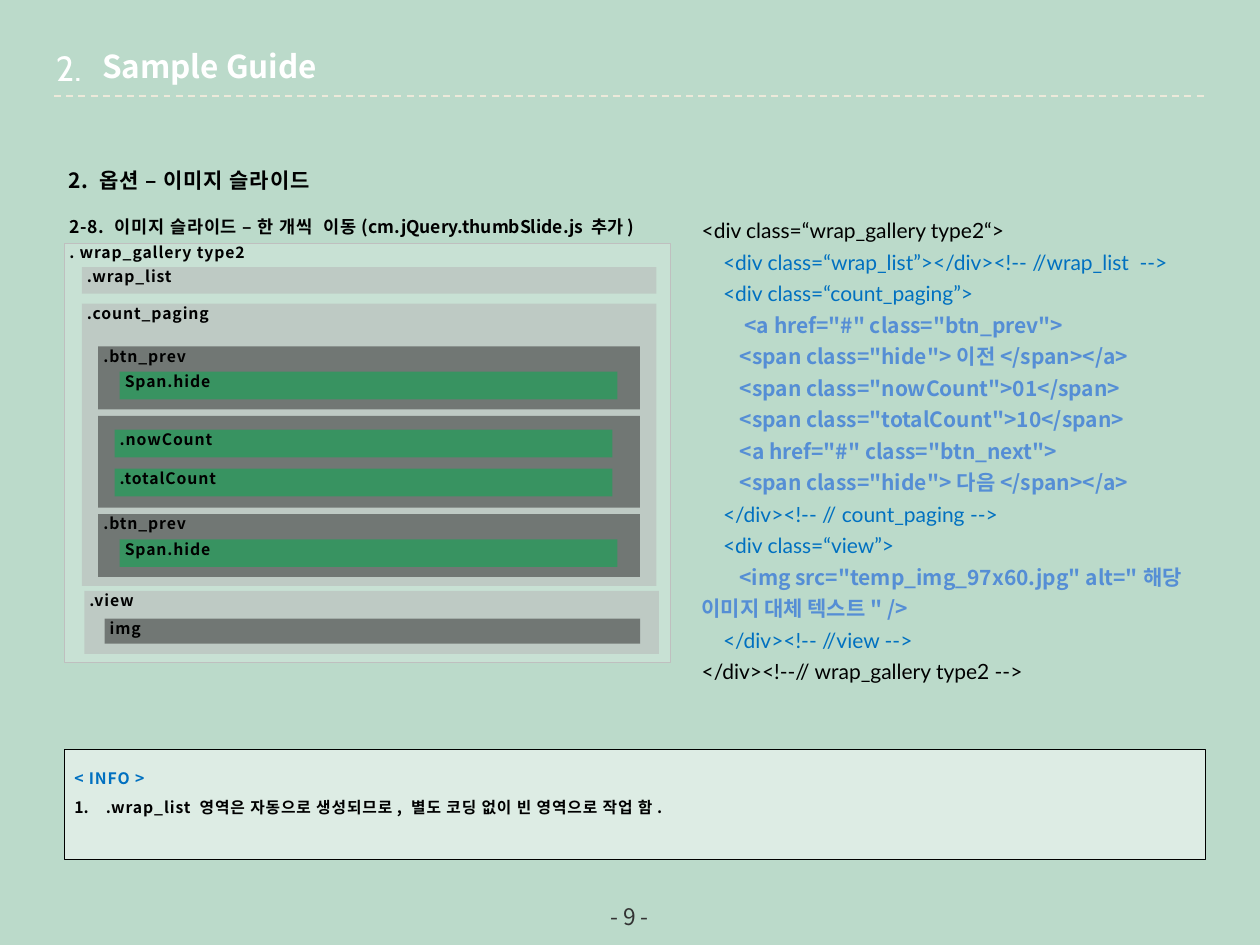
from dataclasses import dataclass

import pptx
import pptx.dml.color
import pptx.enum.dml
import pptx.enum.shapes
import pptx.enum.text
import pptx.oxml
import pptx.oxml.ns
import pptx.util
from pptx.util import Inches

COLORS = {
    "background": "BBDACA", "rule": "ECE9DA", "white": "FFFFFF", "black": "000000",
    "frame": "BFBFBF", "section": "B5B5B5", "block": "262626", "item": "00B050",
    "markup": "0070C0", "inner": "558ED5", "number": "333333",
}
SANS, CODE = "Noto Sans CJK KR", "Lato"


@dataclass(frozen=True)
class Style:
    size: float
    color: str = "black"
    face: str = SANS
    bold: bool = False
    spacing: float = 0


@dataclass(frozen=True)
class Block:
    label: str
    left: float
    top: float
    width: float
    height: float
    color: str = "section"
    alpha: int = 50


@dataclass(frozen=True)
class CodeLine:
    indent: int
    text: str
    style: Style
    indent_style: Style | None = None


LABEL = Style(9, bold=True, spacing=0.5)
OUTER = Style(12, face=CODE)
MARKUP = Style(12, "markup", CODE)
INNER = Style(12, "inner", bold=True)

BLOCKS = [
    Block(".wrap_list", 0.65, 2.12, 4.56, 0.21),
    Block(".count_paging", 0.65, 2.41, 4.56, 2.24),
    Block(".view", 0.67, 4.69, 4.56, 0.5),
    Block(".btn_prev", 0.78, 2.75, 4.3, 0.5, "block"),
    Block("img", 0.83, 4.91, 4.25, 0.2, "block"),
    Block("Span.hide", 0.95, 2.95, 3.95, 0.22, "item"),
    Block("", 0.78, 3.3, 4.3, 0.73, "block"),
    Block(".btn_prev", 0.78, 4.08, 4.3, 0.5, "block"),
    Block("Span.hide", 0.95, 4.28, 3.95, 0.22, "item"),
    Block(".nowCount", 0.91, 3.41, 3.95, 0.22, "item"),
    Block(".totalCount", 0.91, 3.72, 3.95, 0.22, "item"),
]

CODE_LINES = [
    CodeLine(0, "<div class=“wrap_gallery type2“>", OUTER),
    CodeLine(4, "<div class=“wrap_list”></div><!-- //wrap_list  -->", MARKUP),
    CodeLine(4, "<div class=“count_paging”>", MARKUP),
    CodeLine(8, '<a href="#" class="btn_prev">', INNER, MARKUP),
    CodeLine(8, '<span class="hide">이전</span></a>', INNER),
    CodeLine(8, '<span class="nowCount">01</span>', INNER),
    CodeLine(8, '<span class="totalCount">10</span>', INNER),
    CodeLine(8, '<a href="#" class="btn_next">', INNER),
    CodeLine(8, '<span class="hide">다음</span></a>', INNER),
    CodeLine(4, "</div><!-- // count_paging -->", MARKUP),
    CodeLine(4, "<div class=“view”>", MARKUP),
    CodeLine(8, '<img src="temp_img_97x60.jpg" alt="해당 이미지 대체 텍스트" />',
             INNER, Style(12)),
    CodeLine(4, "</div><!-- //view -->", MARKUP),
    CodeLine(0, "</div><!--// wrap_gallery type2 -->", OUTER),
]


def rgb(name: str) -> pptx.dml.color.RGBColor:
    return pptx.dml.color.RGBColor.from_string(COLORS[name])


def add_element(parent, tag: str, **attributes: str):
    element = pptx.oxml.ns.qn(tag)
    child = parent.makeelement(element, attributes)
    parent.append(child)
    return child


def apply_style(font, style: Style) -> None:
    """Format a paragraph or run font, for Latin and Korean letters alike."""
    font.size = pptx.util.Pt(style.size)
    font.bold = style.bold
    font.name = style.face
    font.color.rgb = rgb(style.color)
    properties = font._rPr
    properties.set("spc", str(round(style.spacing * 100)))
    add_element(properties, "a:ea", typeface=style.face)


def prepare_frame(shape, margins=(0.04, 0, 0, 0)):
    frame = shape.text_frame
    frame.word_wrap = True
    frame.vertical_anchor = pptx.enum.text.MSO_ANCHOR.TOP
    (frame.margin_left, frame.margin_top,
     frame.margin_right, frame.margin_bottom) = map(Inches, margins)
    return frame


def write(para, text: str, style: Style, align=pptx.enum.text.PP_ALIGN.LEFT) -> None:
    para.text = text
    para.alignment = align
    apply_style(para.font, style)


def add_box(page, left: float, top: float, width: float, height: float,
            margins=(0.04, 0, 0, 0)):
    box = page.shapes.add_textbox(*map(Inches, (left, top, width, height)))
    return prepare_frame(box, margins)


def add_block(page, block: Block, border: str = "", border_width: float = 0,
              margins=(0.04, 0, 0, 0)):
    """Draw a translucent labelled rectangle and return its text frame."""
    shape = page.shapes.add_shape(
        pptx.enum.shapes.MSO_SHAPE.RECTANGLE,
        *map(Inches, (block.left, block.top, block.width, block.height)))
    shape.shadow.inherit = False
    shape.fill.solid()
    shape.fill.fore_color.rgb = rgb(block.color)
    color = shape.fill._xPr.find(".//" + pptx.oxml.ns.qn("a:srgbClr"))
    add_element(color, "a:alpha", val=str(block.alpha * 1000))
    if border:
        shape.line.color.rgb = rgb(border)
        shape.line.width = pptx.util.Pt(border_width)
    else:
        shape.line.fill.background()
    frame = prepare_frame(shape, margins)
    if block.label:
        write(frame.paragraphs[0], block.label, LABEL)
    return frame


def add_header_rule(page) -> None:
    rule = page.shapes.add_connector(
        pptx.enum.shapes.MSO_CONNECTOR.STRAIGHT, *map(Inches, (0.43, 0.76, 9.57, 0.76)))
    rule.line.color.rgb = rgb("rule")
    rule.line.width = pptx.util.Pt(1)
    rule.line.dash_style = pptx.enum.dml.MSO_LINE.DASH
    add_element(rule._element.spPr, "a:effectLst")


def add_code(page) -> None:
    frame = add_box(page, 5.47, 1.63, 4.25, 3.89, (0.1, 0.05, 0.1, 0.05))
    for index, line in enumerate(CODE_LINES):
        para = frame.add_paragraph() if index else frame.paragraphs[0]
        para.line_spacing = pptx.util.Pt(18)
        indent = " " * line.indent
        if line.indent_style:
            for text, style in ((indent, line.indent_style), (line.text, line.style)):
                span = para.add_run()
                span.text = text
                apply_style(span.font, style)
        else:
            write(para, indent + line.text, line.style)


def add_headings(page) -> None:
    heading = add_box(page, 0.5, 1.23, 2.2, 0.3).paragraphs[0]
    heading.line_spacing = 1.5
    write(heading, "2. 옵션 – 이미지 슬라이드", Style(12, bold=True, spacing=0.5))
    subheading = add_box(page, 0.51, 1.63, 4.63, 0.25).paragraphs[0]
    subheading.line_spacing = 1.5
    for text, spacing in (("2-8. 이미지 슬라이드 – 한 개씩  이동(", 0.5),
                          ("cm.jQuery.thumbSlide.js 추가", 0), (")", 0.5)):
        span = subheading.add_run()
        span.text = text
        apply_style(span.font, Style(10, bold=True, spacing=spacing))


def add_info(page) -> None:
    frame = add_block(page, Block("", 0.51, 5.95, 9.06, 0.87, "white"),
                      "black", 0.75, (0.08, 0.08, 0.08, 0))
    caption, note = frame.paragraphs[0], frame.add_paragraph()
    caption.line_spacing = note.line_spacing = 1.5
    write(caption, "< INFO >", Style(9, "markup", bold=True, spacing=0.5))
    properties = note._p.get_or_add_pPr()
    properties.set("marL", str(Inches(0.25)))
    properties.set("indent", str(-Inches(0.25)))
    add_element(properties, "a:buAutoNum", type="arabicPeriod")
    write(note, ".wrap_list 영역은 자동으로 생성되므로, 별도 코딩 없이 빈 영역으로 작업 함.", LABEL)


def add_title(page) -> None:
    center = pptx.enum.text.PP_ALIGN.CENTER
    margins = (0.1, 0.05, 0.1, 0.05)
    number = add_box(page, 0.27, 0.32, 0.55, 0.44, margins)
    write(number.paragraphs[0], "2.", Style(20, "white", "Cabin"), center)
    title = page.shapes.title
    title.left, title.top, title.width, title.height = map(Inches, (0.71, 0.32, 4.61, 0.4))
    frame = prepare_frame(title, margins)
    frame.auto_size = pptx.enum.text.MSO_AUTO_SIZE.NONE
    write(frame.paragraphs[0], "Sample Guide", Style(18, "white", bold=True))
    footer = add_box(page, 3.83, 7.12, 2.33, 0.31, (0, 0, 0, 0))
    footer.vertical_anchor = pptx.enum.text.MSO_ANCHOR.MIDDLE
    write(footer.paragraphs[0], "- 9 -", Style(13, "number"), center)


def main() -> None:
    deck = pptx.Presentation()
    deck.slide_width, deck.slide_height = Inches(10), Inches(7.5)
    page = deck.slides.add_slide(deck.slide_layouts.get_by_name("Title Only"))
    page.background.fill.solid()
    page.background.fill.fore_color.rgb = rgb("background")
    add_header_rule(page)
    add_title(page)
    add_headings(page)
    add_block(page, Block(". wrap_gallery type2", 0.51, 1.93, 4.81, 3.33, "white", 20),
              "frame", 0.25)
    for block in BLOCKS:
        add_block(page, block)
    add_code(page)
    add_info(page)
    deck.save("out.pptx")


if __name__ == "__main__":
    main()
